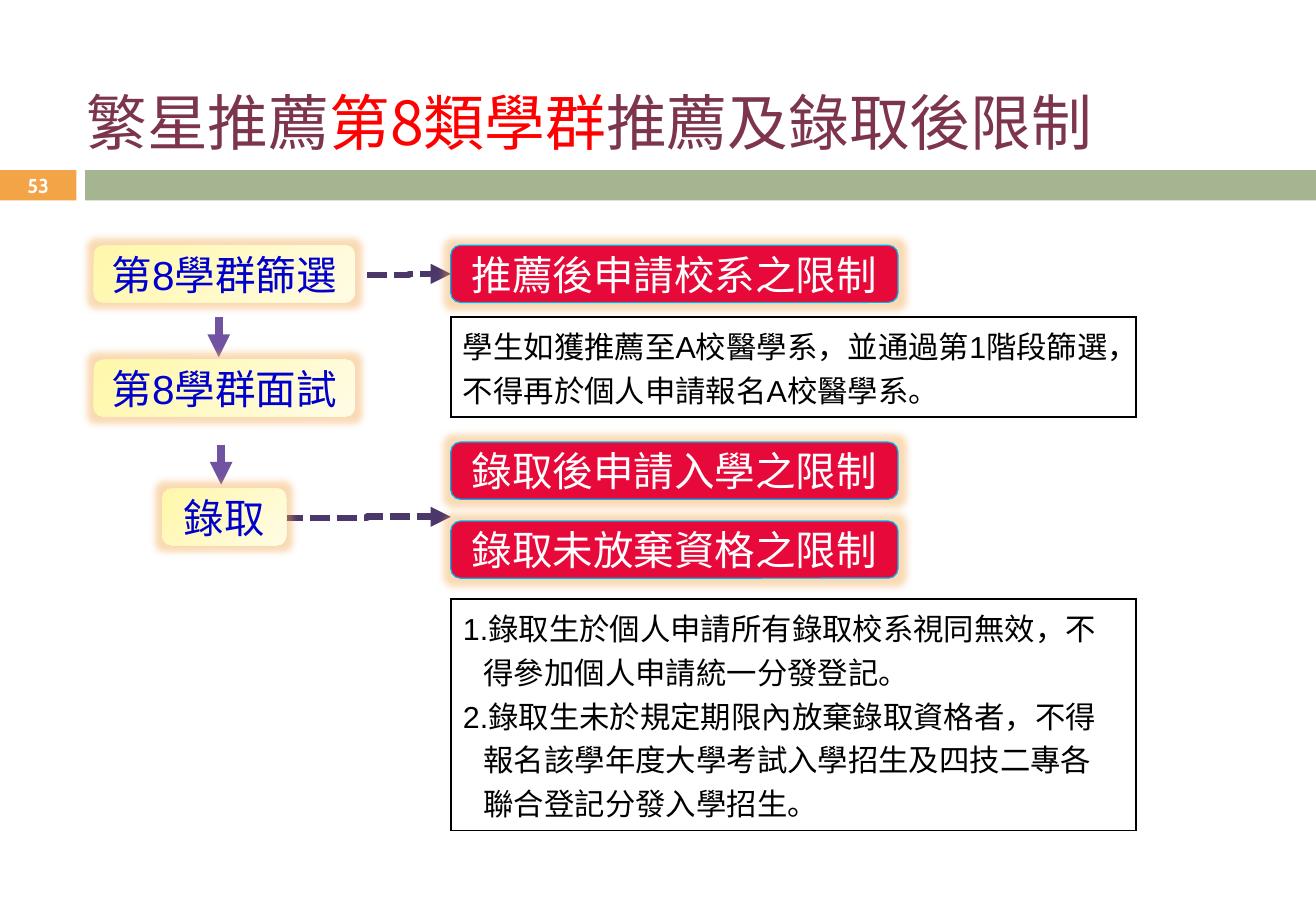
from lxml import etree
from pptx import Presentation
from pptx import util as u
from pptx.dml.color import RGBColor
from pptx.enum import dml, shapes, text
from pptx.oxml import parse_xml
from pptx.oxml.ns import nsdecls, qn

TITLE = [("繁星推薦", "7C354D", "Arial"),
         ("第8類學群", "FF0000", "Noto Sans CJK SC"),
         ("推薦及錄取後限制", "7C354D", "Noto Sans CJK SC")]
NUMBER = "53"

# Columns and rows in inches
WIDE, HIGH = 10.83, 7.5
LEFT, RIGHT, BOX = 0.77, 3.71, 0.47
STEP_W, LIMIT_W, NOTE_W = 2.15, 3.68, 5.64
MID = LEFT + STEP_W / 2
ROWS = [2.02, 2.96, 4.02]

# label, top, width
STEPS = [("第8學群篩選", ROWS[0], STEP_W),
         ("第8學群面試", ROWS[1], STEP_W),
         ("錄取", ROWS[2], 1.02)]
# label, top
LIMITS = [("推薦後申請校系之限制", ROWS[0]),
          ("錄取後申請入學之限制", 3.64),
          ("錄取未放棄資格之限制", 4.29)]
# top, height, hanging indent, paragraphs
NOTES = [
    (2.61, 0.7, 0,
     ["學生如獲推薦至A校醫學系，並通過第1階段篩選，不得再於個人申請報名A校醫學系。"]),
    (4.93, 1.6, 0.17,
     ["1.錄取生於個人申請所有錄取校系視同無效，不得參加個人申請統一分發登記。",
      "2.錄取生未於規定期限內放棄錄取資格者，不得報名該學年度大學考試入學招生及四技二專各聯合登記分發入學招生。"]),
]
# start x, row of the step it leaves
DASHES = [(3.02, ROWS[0]), (2.33, ROWS[2])]
# x, top
DROPS = [(1.8, 2.61), (1.82, 3.66)]
DROP_H = 0.33


def rgb(code):
    return RGBColor.from_string(code)


def inches(*sizes):
    return [u.Inches(s) for s in sizes]


def style(run, size, color, face="Arial", bold=None):
    font = run.font
    font.size, font.name, font.bold = u.Pt(size), face, bold
    font.color.rgb = rgb(color)
    east = etree.SubElement(run._r.rPr, qn("a:ea"))
    east.set("typeface", "Noto Sans CJK SC")


def block(kind, x, y, w, h, color=None):
    """Add a preset shape without line or shadow."""
    shape = slide.shapes.add_shape(kind, *inches(x, y, w, h))
    shape.shadow.inherit = False
    shape.line.fill.background()
    if color:
        shape.fill.solid()
        shape.fill.fore_color.rgb = rgb(color)
    return shape


def label(shape, words, size, color, face="Arial", bold=None):
    frame = shape.text_frame
    frame.text = words
    frame.word_wrap = False
    frame.vertical_anchor = text.MSO_ANCHOR.MIDDLE
    para = frame.paragraphs[0]
    para.alignment = text.PP_ALIGN.CENTER
    style(para.runs[0], size, color, face, bold)


def card(words, x, y, w, ink):
    """Add a rounded box with a soft orange glow."""
    shape = block(shapes.MSO_SHAPE.ROUNDED_RECTANGLE, x, y, w, BOX)
    label(shape, words, 24, ink)
    effects = shape._element.spPr.find(qn("a:effectLst"))
    effects.append(parse_xml(
        f'<a:glow {nsdecls("a")} rad="101600"><a:srgbClr val="F3A447">'
        '<a:alpha val="40000"/></a:srgbClr></a:glow>'))
    return shape


def arrow(kind, x1, y1, x2, y2, color, width):
    link = slide.shapes.add_connector(kind, *inches(x1, y1, x2, y2))
    link.line.color.rgb = rgb(color)
    link.line.width = u.Pt(width)
    etree.SubElement(link._element.spPr, qn("a:effectLst"))
    return link


def head(link):
    tip = etree.SubElement(link.line._get_or_add_ln(), qn("a:tailEnd"))
    tip.set("type", "triangle")


def note(top, high, hang, lines):
    """Add a bordered one-cell table."""
    frame = slide.shapes.add_table(1, 1, *inches(RIGHT, top, NOTE_W, high))
    table = frame.table
    table.first_row = table.horz_banding = False
    cell = table.cell(0, 0)
    cell.margin_right = u.Inches(0.18)
    cell.text_frame.text = "\n".join(lines)
    for para in cell.text_frame.paragraphs:
        props = para._p.get_or_add_pPr()
        props.set("marL", str(u.Inches(hang)))
        props.set("indent", str(-u.Inches(hang)))
        style(para.runs[0], 18, "000000")
    edges = cell._tc.get_or_add_tcPr()
    for side in "LRTB":
        edges.append(parse_xml(
            f'<a:ln{side} {nsdecls("a")} w="12700"><a:solidFill>'
            f'<a:srgbClr val="000000"/></a:solidFill></a:ln{side}>'))
    cell.fill.background()


deck = Presentation()
deck.slide_width, deck.slide_height = inches(WIDE, HIGH)
slide = deck.slides.add_slide(deck.slide_layouts[5])

rect = shapes.MSO_SHAPE.RECTANGLE
label(block(rect, 0, 1.4, 0.63, 0.25, "F3A447"), NUMBER, 11.9, "FFFFFF",
      "Cabin", True)
block(rect, 0.7, 1.4, WIDE - 0.7, 0.25, "A5B592")

title = slide.shapes.title
title.left, title.top, title.width, title.height = inches(0.61, 0.6, 9.76, 0.79)
title.text_frame.vertical_anchor = text.MSO_ANCHOR.MIDDLE
para = title.text_frame.paragraphs[0]
para.alignment = text.PP_ALIGN.LEFT
for words, color, face in TITLE:
    run = para.add_run()
    run.text = words
    style(run, 36, color, face)

for x, row in DASHES:
    y = row + BOX / 2
    link = arrow(shapes.MSO_CONNECTOR.ELBOW, x, y + 0.01, RIGHT, y,
                 "4C376B", 4)
    link.line.dash_style = dml.MSO_LINE.SQUARE_DOT
    head(link)
for x, y in DROPS:
    head(arrow(shapes.MSO_CONNECTOR.STRAIGHT, x, y, x, y + DROP_H,
               "7153A1", 4.5))

for words, y, w in STEPS:
    fill = card(words, MID - w / 2, y, w, "0000CC").fill
    fill.gradient()
    fill.gradient_angle = 315
    for stop, color in zip(fill.gradient_stops, ("FFF7A9", "FFFCE5")):
        stop.color.rgb = rgb(color)
for words, y in LIMITS:
    shape = card(words, RIGHT, y, LIMIT_W, "FFFFFF")
    shape.fill.solid()
    shape.fill.fore_color.rgb = rgb("E70939")
    shape.line.color.rgb = rgb("00B0F0")
    shape.line.width = u.Pt(0.75)
for item in NOTES:
    note(*item)

deck.save("out.pptx")
